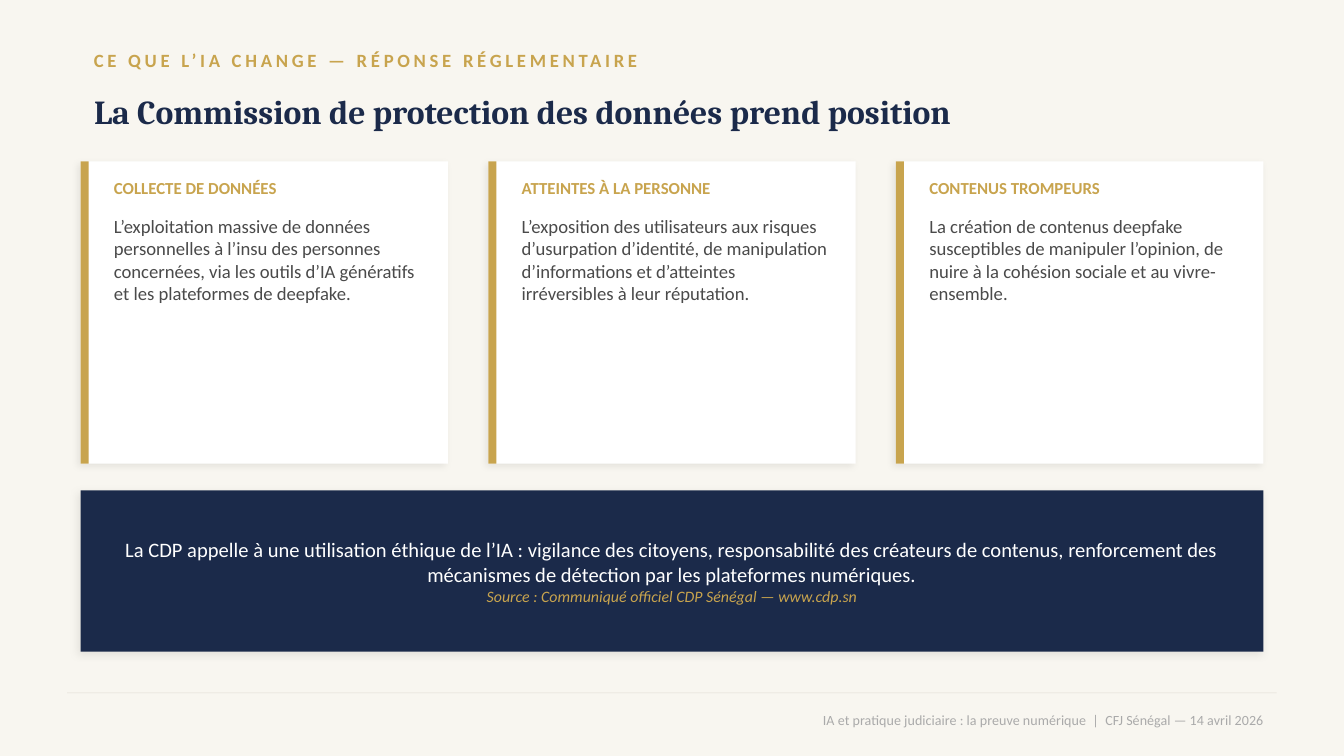
from pptx import Presentation
from pptx.dml.color import RGBColor
from pptx.enum.shapes import MSO_SHAPE as Shape
from pptx.enum.text import MSO_ANCHOR as Anchor, MSO_AUTO_SIZE as Fit, PP_ALIGN as Align
from pptx.oxml import parse_xml
from pptx.oxml.ns import nsdecls, qn
from pptx.util import Inches, Pt

GOLD, NAVY, WHITE, GREY = "C8A44E", "1B2A4A", "FFFFFF", "4A4A4A"

CARDS = [
    ("COLLECTE DE DONNÉES",
     "L’exploitation massive de données personnelles à l’insu des personnes "
     "concernées, via les outils d’IA génératifs et les plateformes de deepfake."),
    ("ATTEINTES À LA PERSONNE",
     "L’exposition des utilisateurs aux risques d’usurpation d’identité, de "
     "manipulation d’informations et d’atteintes irréversibles à leur réputation."),
    ("CONTENUS TROMPEURS",
     "La création de contenus deepfake susceptibles de manipuler l’opinion, de "
     "nuire à la cohésion sociale et au vivre-ensemble."),
]


def paint(color, code):
    color.rgb = RGBColor.from_string(code)


def add_rect(slide, box, code, raised=False):
    rect = slide.shapes.add_shape(Shape.RECTANGLE, *map(Inches, box))
    rect.fill.solid()
    paint(rect.fill.fore_color, code)
    rect.line.fill.background()
    rect.shadow.inherit = False
    if raised:
        rect._element.spPr.find(qn("a:effectLst")).append(parse_xml(
            f'<a:outerShdw {nsdecls("a")} blurRad="{Pt(4)}" dist="{Pt(2)}" '
            'dir="8100000" algn="bl" rotWithShape="0"><a:srgbClr val="000000">'
            '<a:alpha val="8000"/></a:srgbClr></a:outerShdw>'))


def style(para, text, size, code, face="Calibri", bold=False, italic=False,
          align=Align.LEFT):
    para.alignment = align
    para.add_run().text = text
    font = para.font
    font.name, font.size, font.bold, font.italic = face, Pt(size), bold, italic
    paint(font.color, code)


def set_frame(shape, anchor=Anchor.MIDDLE):
    frame = shape.text_frame
    frame.word_wrap = True
    frame.auto_size = Fit.NONE
    frame.vertical_anchor = anchor
    return frame


def add_text(slide, box, text, size, code, anchor=Anchor.MIDDLE, **look):
    frame = set_frame(slide.shapes.add_textbox(*map(Inches, box)), anchor)
    style(frame.paragraphs[0], text, size, code, **look)
    return frame


def add_head(slide):
    frame = add_text(slide, (0.6, 0.3, 8.4, 0.3),
                     "CE QUE L’IA CHANGE — RÉPONSE RÉGLEMENTAIRE", 10, GOLD, bold=True)
    frame.paragraphs[0].runs[0]._r.get_or_add_rPr().set("spc", "200")
    title = slide.shapes.title
    title.left, title.top, title.width, title.height = map(Inches, (0.6, 0.6, 8.8, 0.45))
    style(set_frame(title).paragraphs[0],
          "La Commission de protection des données prend position",
          18, NAVY, face="Cambria", bold=True)


def add_card(slide, left, width, label, text):
    top, height = 1.2, 2.25
    add_rect(slide, (left, top, width, height), WHITE, raised=True)
    add_rect(slide, (left, top, 0.06, height), GOLD)
    add_text(slide, (left + 0.15, top + 0.05, width - 0.25, 0.3), label, 9, GOLD, bold=True)
    add_text(slide, (left + 0.15, top + 0.35, width - 0.25, 1.8), text, 10, GREY,
             anchor=Anchor.TOP)


def add_call(slide):
    add_rect(slide, (0.6, 3.65, 8.8, 1.2), NAVY, raised=True)
    frame = add_text(
        slide, (0.8, 3.65, 8.4, 1.2),
        "La CDP appelle à une utilisation éthique de l’IA : vigilance des citoyens, "
        "responsabilité des créateurs de contenus, renforcement des mécanismes de "
        "détection par les plateformes numériques.", 11, WHITE, align=Align.CENTER)
    style(frame.add_paragraph(), "Source : Communiqué officiel CDP Sénégal — www.cdp.sn",
          8.5, GOLD, italic=True, align=Align.CENTER)


def add_foot(slide):
    add_rect(slide, (0.5, 5.15, 9, 0.01), "EFECE5")
    add_text(slide, (0.5, 5.18, 9, 0.35),
             "IA et pratique judiciaire : la preuve numérique  |  CFJ Sénégal — 14 avril 2026",
             7.5, "AAAAAA", align=Align.RIGHT)


def main():
    deck = Presentation()
    deck.slide_width, deck.slide_height = Inches(10), Inches(10 * 9 / 16)
    slide = deck.slides.add_slide(deck.slide_layouts[5])
    slide.background.fill.solid()
    paint(slide.background.fill.fore_color, "F8F6F0")
    add_foot(slide)
    add_head(slide)
    gap = 0.3
    width = (8.8 - 2 * gap) / len(CARDS)
    for index, (label, text) in enumerate(CARDS):
        add_card(slide, 0.6 + index * (width + gap), width, label, text)
    add_call(slide)
    deck.save("out.pptx")


if __name__ == "__main__":
    main()
